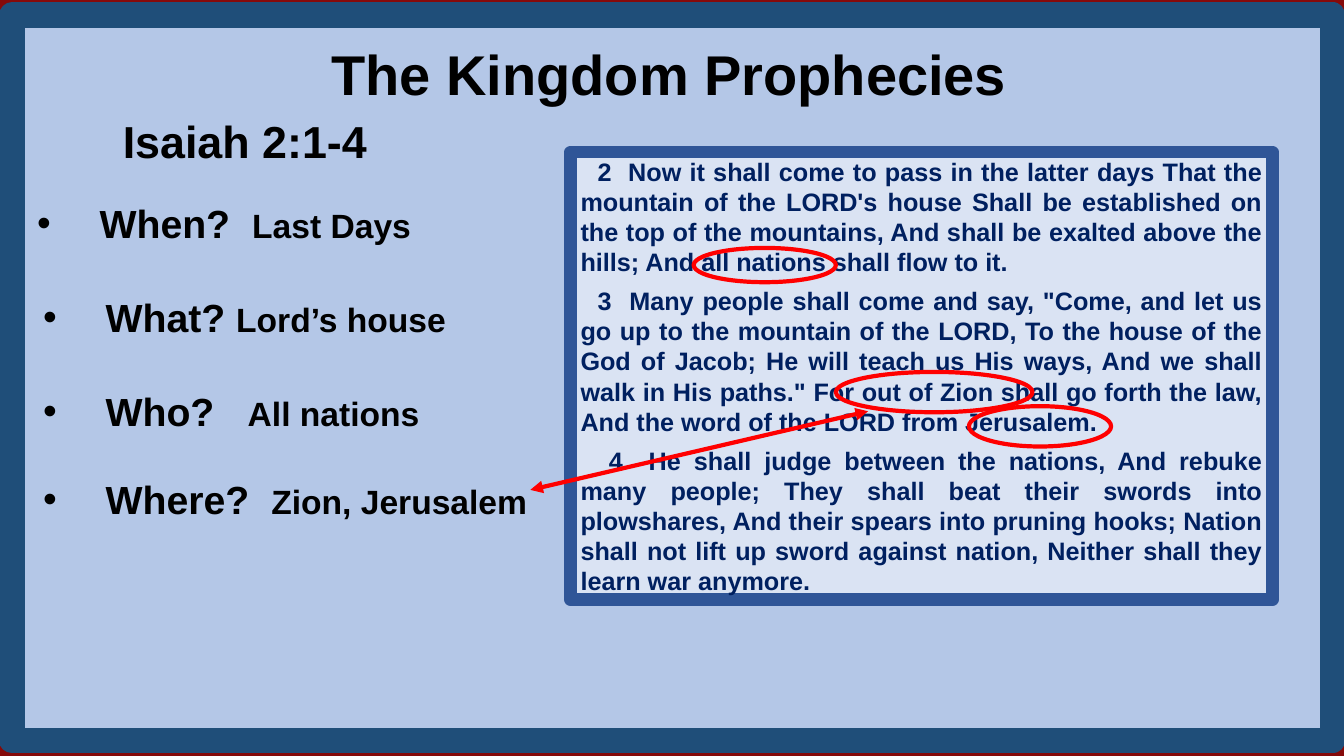
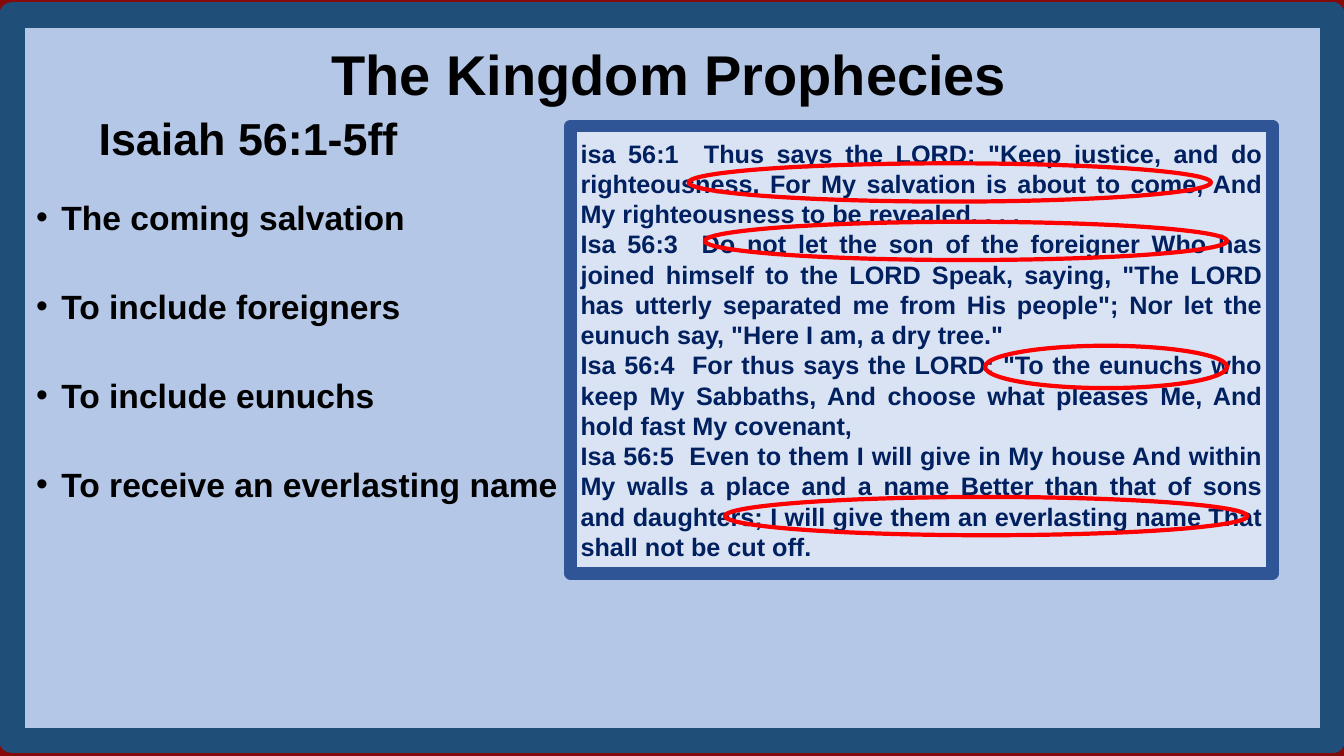
from pptx import Presentation
from pptx.dml.color import RGBColor
from pptx.enum.shapes import MSO_CONNECTOR, MSO_SHAPE
from pptx.enum.text import MSO_ANCHOR, PP_ALIGN
from pptx.oxml.ns import qn
from pptx.util import Inches, Pt
from lxml import etree

COLORS = {
    "edge": "860A0A", "panel": "B4C7E7", "frame": "1F4E79", "text": "000000",
    "box": "DAE3F3", "box_line": "2F5597", "verse": "002060", "mark": "FF0000",
}
FONT = "Arial"
TITLE = "The Kingdom Prophecies"


def rgb(name):
    return RGBColor.from_string(COLORS[name])


def add_run(p, text, size, color="text"):
    r = p.add_run()
    r.text = text
    r.font.name = FONT
    r.font.size = Pt(size)
    r.font.bold = True
    r.font.color.rgb = rgb(color)
    return r


def next_paragraph(tf):
    first = tf.paragraphs[0]
    return tf.add_paragraph() if first.runs else first


def set_indent(p, left, first=0):
    pPr = p._p.get_or_add_pPr()
    pPr.set("marL", str(Inches(left)))
    pPr.set("indent", str(Inches(first)))
    return pPr


def add_outlined(s, kind, box, line, width, fill=None):
    sp = s.shapes.add_shape(kind, *map(Inches, box))
    sp.shadow.inherit = False
    if fill:
        sp.fill.solid()
        sp.fill.fore_color.rgb = rgb(fill)
    else:
        sp.fill.background()
    sp.line.color.rgb = rgb(line)
    sp.line.width = Pt(width)
    return sp


# Background, frame and heading shared by the slides
def add_base(prs, subtitle, indent, title_gap):
    s = prs.slides.add_slide(prs.slide_layouts[6])
    s.background.fill.solid()
    s.background.fill.fore_color.rgb = rgb("edge")
    add_outlined(s, MSO_SHAPE.RECTANGLE, (0.12, 0.15, 13.1, 7.2),
                 "frame", 18, "panel")
    tf = s.shapes.add_textbox(*map(Inches, (0.26, 0.34, 12.75, 5.09))).text_frame
    tf.word_wrap = True
    p = next_paragraph(tf)
    p.alignment = PP_ALIGN.CENTER
    p.space_after = Pt(title_gap)
    add_run(p, TITLE, 40)
    p = next_paragraph(tf)
    set_indent(p, indent)
    add_run(p, subtitle, 32)
    return s, tf


def add_bullet(tf, before, left, hanging):
    p = next_paragraph(tf)
    p.space_before = Pt(before)
    pPr = set_indent(p, left, -hanging)
    color = etree.SubElement(pPr, qn("a:buClr"))
    etree.SubElement(color, qn("a:srgbClr")).set("val", COLORS["text"])
    etree.SubElement(pPr, qn("a:buFont")).set("typeface", FONT)
    etree.SubElement(pPr, qn("a:buChar")).set("char", "•")
    return p


# Question and answer, parted by one widened space
def add_question(tf, before, left, question, answer, widen):
    p = add_bullet(tf, before, left, 0.62)
    add_run(p, question, 28)
    space = add_run(p, " ", 28)
    space.font._element.set("spc", str(widen * 100))
    add_run(p, answer, 24)


def add_verses(s, top, verses, after=0):
    sp = add_outlined(s, MSO_SHAPE.RECTANGLE, (5.66, top, 6.96, 4.44),
                      "box_line", 9, "box")
    tf = sp.text_frame
    tf.word_wrap = True
    tf.vertical_anchor = MSO_ANCHOR.MIDDLE
    for indent, verse in verses:
        p = next_paragraph(tf)
        p.alignment = PP_ALIGN.JUSTIFY
        p.space_after = Pt(after)
        set_indent(p, 0, indent)
        add_run(p, verse, 18, "verse")


def add_rings(s, boxes):
    for box in boxes:
        add_outlined(s, MSO_SHAPE.OVAL, box, "mark", 3)


def add_double_arrow(s, *ends):
    c = s.shapes.add_connector(MSO_CONNECTOR.STRAIGHT, *map(Inches, ends))
    c.line.color.rgb = rgb("mark")
    c.line.width = Pt(3)
    ln = c.line._get_or_add_ln()
    for tag in ("a:headEnd", "a:tailEnd"):
        etree.SubElement(ln, qn(tag)).set("type", "triangle")
    etree.SubElement(c._element.spPr, qn("a:effectLst"))


def build_isaiah_2(prs):
    s, tf = add_base(prs, "Isaiah 2:1-4", 0.86, 5)
    for question in [
        (23, 0.63, "When?", "Last Days", 8),
        (33.6, 0.69, "What?", "Lord’s house", 0),
        (33.6, 0.69, "Who?", "All nations", 16),
        (28.8, 0.69, "Where?", "Zion, Jerusalem", 8),
    ]:
        add_question(tf, *question)
    add_verses(s, 1.51, [
        (0.17, "2  Now it shall come to pass in the latter days That the "
               "mountain of the LORD's house Shall be established on the top "
               "of the mountains, And shall be exalted above the hills; And "
               "all nations shall flow to it."),
        (0.17, "3  Many people shall come and say, \"Come, and let us go up to "
               "the mountain of the LORD, To the house of the God of Jacob; He "
               "will teach us His ways, And we shall walk in His paths.\" For "
               "out of Zion shall go forth the law, And the word of the LORD "
               "from Jerusalem."),
        (0.28, "4  He shall judge between the nations, And rebuke many people; "
               "They shall beat their swords into plowshares, And their spears "
               "into pruning hooks; Nation shall not lift up sword against "
               "nation, Neither shall they learn war anymore."),
    ], after=6)
    add_rings(s, [(8.29, 3.69, 1.95, 0.4), (9.61, 4.03, 1.41, 0.4),
                  (6.88, 2.46, 1.41, 0.34)])
    add_double_arrow(s, 5.26, 4.86, 8.61, 4.08)


def build_isaiah_56(prs):
    s, tf = add_base(prs, "Isaiah 56:1-5ff", 0.62, 3)
    points = ["The coming salvation", "To include foreigners",
              "To include eunuchs", "To receive an everlasting name"]
    for i, point in enumerate(points):
        add_run(add_bullet(tf, 34.8 if i else 23, 0.25, 0.25), point, 24)
    add_verses(s, 1.25, [
        (0, "isa 56:1  Thus says the LORD: \"Keep justice, and do "
            "righteousness, For My salvation is about to come, And My "
            "righteousness to be revealed. . . ."),
        (0, "Isa 56:3  Do not let the son of the foreigner Who has joined "
            "himself to the LORD Speak, saying, \"The LORD has utterly "
            "separated me from His people\"; Nor let the eunuch say, \"Here I "
            "am, a dry tree.\""),
        (0, "Isa 56:4  For thus says the LORD: \"To the eunuchs who keep My "
            "Sabbaths, And choose what pleases Me, And hold fast My covenant,"),
        (0, "Isa 56:5  Even to them I will give in My house And within My "
            "walls a place and a name Better than that of sons and daughters; "
            "I will give them an everlasting name That shall not be cut off."),
    ])
    add_rings(s, [(6.83, 1.62, 5.18, 0.38), (6.99, 2.2, 5.18, 0.38),
                  (9.77, 3.43, 2.4, 0.42), (7.19, 4.93, 5.18, 0.38)])


def main():
    prs = Presentation()
    prs.slide_width, prs.slide_height = Inches(13.33), Inches(7.5)
    build_isaiah_2(prs)
    build_isaiah_56(prs)
    prs.save("out.pptx")


if __name__ == "__main__":
    main()
